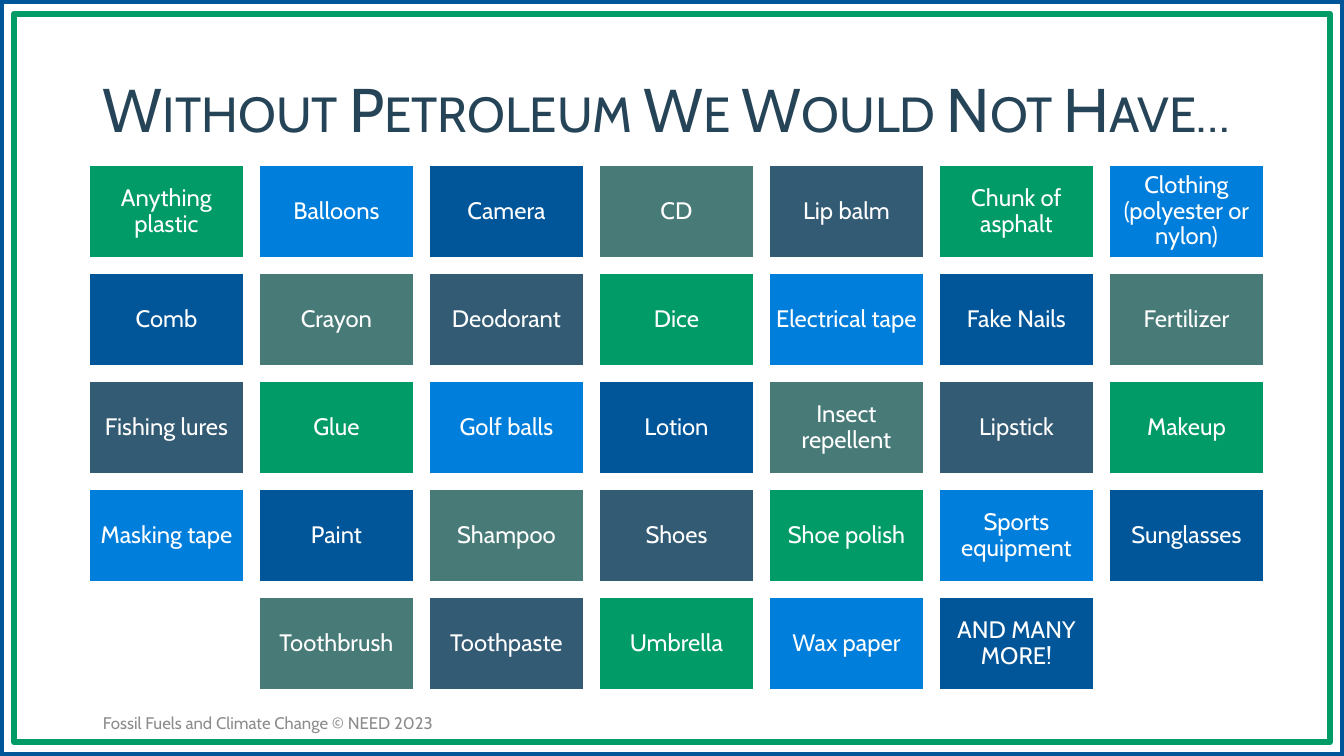
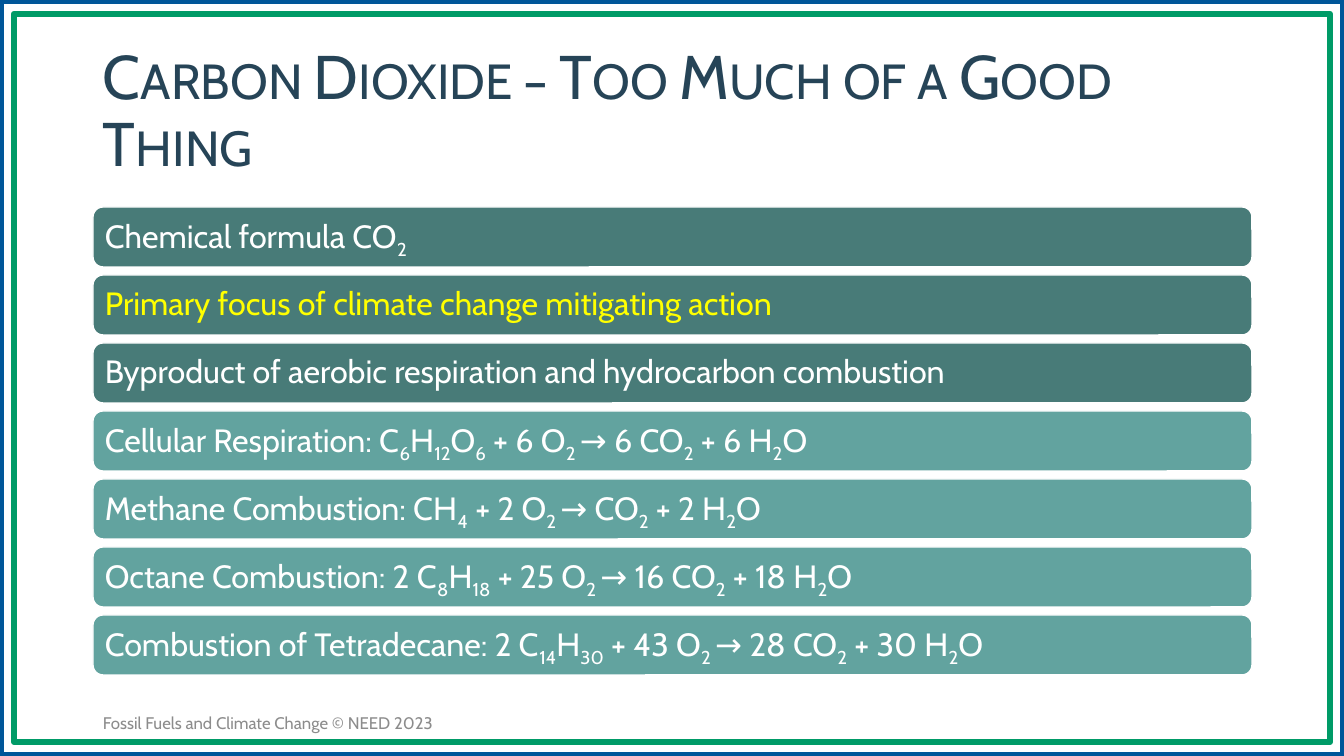
"""Build two slides on petroleum products and carbon dioxide."""
from pptx import Presentation
from pptx.dml.color import RGBColor
from pptx.enum.shapes import MSO_SHAPE
from pptx.enum.text import MSO_ANCHOR, MSO_AUTO_SIZE, PP_ALIGN
from pptx.util import Pt

RECT = MSO_SHAPE.RECTANGLE
ROUNDED = MSO_SHAPE.ROUNDED_RECTANGLE
MIDDLE = MSO_ANCHOR.MIDDLE
LEFT = PP_ALIGN.LEFT
CENTER = PP_ALIGN.CENTER
NO_AUTOFIT = MSO_AUTO_SIZE.NONE

PX = 914400 / 100.8
FONT = "Cabin"
COLORS = {
    "navy": "005699",
    "green": "009B67",
    "blue": "007EDB",
    "teal": "487B78",
    "slate": "335B74",
    "aqua": "62A39F",
    "title": "264457",
    "footer": "8C8C8C",
    "yellow": "FFFF00",
    "white": "FFFFFF",
}
TILE_COLORS = ["green", "blue", "navy", "teal", "slate"]
FOOTER = "Fossil Fuels and Climate Change © NEED 2023"

PRODUCT_ROWS = [
    ["Anything plastic", "Balloons", "Camera", "CD", "Lip balm",
     "Chunk of asphalt", "Clothing (polyester or nylon)"],
    ["Comb", "Crayon", "Deodorant", "Dice", "Electrical tape",
     "Fake Nails", "Fertilizer"],
    ["Fishing lures", "Glue", "Golf balls", "Lotion", "Insect repellent",
     "Lipstick", "Makeup"],
    ["Masking tape", "Paint", "Shampoo", "Shoes", "Shoe polish",
     "Sports equipment", "Sunglasses"],
    ["Toothbrush", "Toothpaste", "Umbrella", "Wax paper", "AND MANY MORE!"],
]
FACTS = [
    ("Chemical formula CO_2_", "teal", "white"),
    ("Primary focus of climate change mitigating action", "teal", "yellow"),
    ("Byproduct of aerobic respiration and hydrocarbon combustion", "teal", "white"),
    ("Cellular Respiration: C_6_H_12_O_6_ + 6 O_2 _→ 6 CO_2_ + 6 H_2_O", "aqua", "white"),
    ("Methane Combustion: CH_4_ + 2 O_2 _→ CO_2_ + 2 H_2_O", "aqua", "white"),
    ("Octane Combustion: 2 C_8_H_18_ + 25 O_2 _→ 16 CO_2_ + 18 H_2_O", "aqua", "white"),
    ("Combustion of Tetradecane: 2 C_14_H_30_ + 43 O_2 _→ 28 CO_2_ + 30 H_2_O", "aqua", "white"),
]


def add_box(slide, preset, box, fill, line, line_width):
    """Add a preset shape; box is left, top, width and height in px."""
    shape = slide.shapes.add_shape(preset, *[round(n * PX) for n in box])
    shape.shadow.inherit = False
    if fill:
        shape.fill.solid()
        shape.fill.fore_color.rgb = RGBColor.from_string(COLORS[fill])
    else:
        shape.fill.background()
    shape.line.color.rgb = RGBColor.from_string(COLORS[line])
    shape.line.width = Pt(line_width)
    return shape


def write(frame, text, size, color, align=LEFT, spacing=0.9, margin=10):
    """Write one paragraph; text between underscores is subscript."""
    frame.word_wrap = True
    frame.auto_size = NO_AUTOFIT
    frame.vertical_anchor = MIDDLE
    frame.margin_left = frame.margin_right = round(margin * PX)
    frame.margin_top = frame.margin_bottom = round(5 * PX)
    paragraph = frame.paragraphs[0]
    paragraph.alignment = align
    paragraph.line_spacing = spacing
    paragraph.font.name = FONT
    paragraph.font.size = Pt(size)
    paragraph.font.color.rgb = RGBColor.from_string(COLORS[color])
    for index, part in enumerate(text.split("_")):
        if part:
            run = paragraph.add_run()
            run.text = part
            if index % 2:
                run._r.get_or_add_rPr().set("baseline", "-25000")
    return paragraph


prs = Presentation()
prs.slide_width = round(1344 * PX)
prs.slide_height = round(756 * PX)
title_only = prs.slide_layouts[5]

slides = []
for heading in ["Without Petroleum We Would Not Have…",
                "Carbon Dioxide – Too Much of a Good Thing"]:
    slide = prs.slides.add_slide(title_only)
    add_box(slide, RECT, (0, 0, 1344, 756), None, "navy", 6)
    add_box(slide, RECT, (14, 14, 1316, 728), None, "green", 4.5)
    title = slide.shapes.title
    title.left, title.top, title.width, title.height = [
        round(n * PX) for n in (93, 40, 1159, 146)]
    heading_line = write(title.text_frame, heading, 44, "title")
    heading_line._p.get_or_add_pPr().get_or_add_defRPr().set("cap", "small")
    footer = slide.shapes.add_textbox(*[round(n * PX) for n in (93, 703, 684, 40)])
    write(footer.text_frame, FOOTER, 12, "footer", spacing=1.0)
    slides.append(slide)
products_slide, carbon_slide = slides

columns = len(PRODUCT_ROWS[0])
for row, products in enumerate(PRODUCT_ROWS):
    first_column = (columns - len(products)) // 2
    for position, product in enumerate(products):
        left = 89 + 170 * (first_column + position)
        fill = TILE_COLORS[(row * columns + position) % len(TILE_COLORS)]
        tile = add_box(products_slide, RECT, (left, 165 + 108 * row, 155, 93),
                       fill, "white", 1)
        write(tile.text_frame, product, 17, "white", CENTER, margin=7)

for row, (fact, fill, color) in enumerate(FACTS):
    bar = add_box(carbon_slide, ROUNDED, (93, 207 + 68 * row, 1159, 60),
                  fill, "white", 1)
    write(bar.text_frame, fact, 23, color, margin=9)

prs.save("out.pptx")
